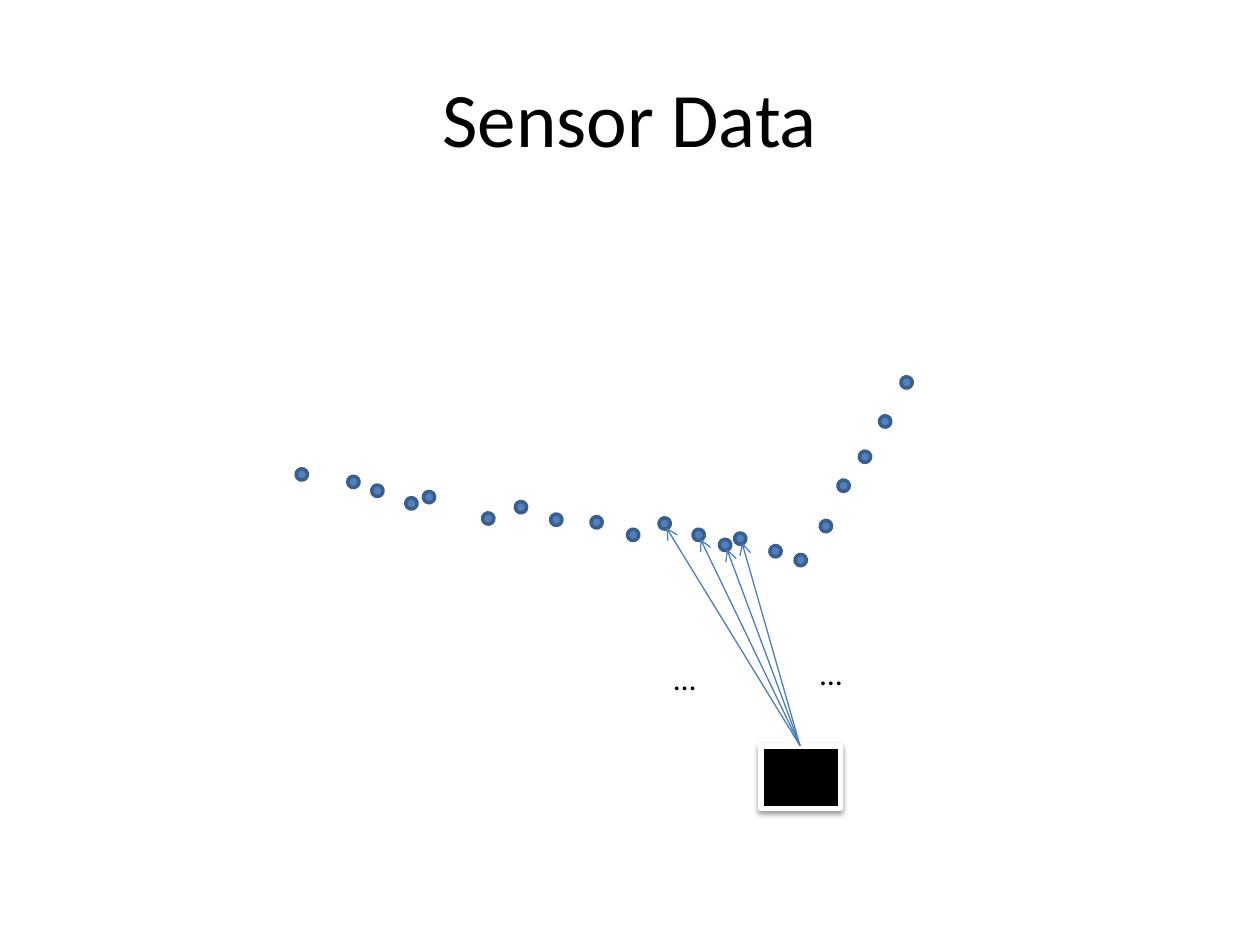
import pptx
import pptx.dml.color
import pptx.enum.shapes
import pptx.enum.text
import pptx.oxml
import pptx.oxml.ns
import pptx.util

PX = 9144
FONT = "Calibri"
COLORS = {
    "text": "000000",
    "dot": "4F81BD",
    "dot_edge": "3A5F8C",
    "ray": "4B7EBC",
    "sensor": "000000",
    "sensor_edge": "FFFFFF",
}
DOT_SIZE = 9
DOT_ANGLE = 19.9
RAY_TIP = (6, 8)
SCANNED_DOTS = [(288, 112), (315, 121), (336, 129), (348, 124)]
OTHER_DOTS = [
    (0, 73), (41, 79), (60, 86), (87, 96), (101, 91), (148, 108),
    (174, 99), (202, 109), (234, 111), (263, 121), (376, 134),
    (396, 141), (416, 114), (430, 82), (447, 59), (463, 31), (480, 0),
]


def px(*lengths):
    return [pptx.util.Emu(length * PX) for length in lengths]


def color(name):
    return pptx.dml.color.RGBColor.from_string(COLORS[name])


def style_text(para, size):
    para.font.name = FONT
    para.font.size = pptx.util.Pt(size)
    para.font.color.rgb = color("text")


def add_filled(page, kind, box, fill, edge, edge_width):
    shape = page.shapes.add_shape(kind, *px(*box))
    shape.shadow.inherit = False
    shape.fill.solid()
    shape.fill.fore_color.rgb = color(fill)
    shape.line.color.rgb = color(edge)
    shape.line.width = pptx.util.Pt(edge_width)
    return shape


def place_title(page, box):
    title = page.shapes.title
    title.left, title.top, title.width, title.height = px(*box)
    title.text_frame.text = "Sensor Data"
    title.text_frame.vertical_anchor = pptx.enum.text.MSO_ANCHOR.MIDDLE
    para = title.text_frame.paragraphs[0]
    para.alignment = pptx.enum.text.PP_ALIGN.CENTER
    style_text(para, 44)


def place_dots(page, box):
    for x, y in SCANNED_DOTS + OTHER_DOTS:
        dot = add_filled(
            page, pptx.enum.shapes.MSO_SHAPE.OVAL,
            (box[0] + x, box[1] + y, DOT_SIZE, DOT_SIZE),
            "dot", "dot_edge", 2,
        )
        dot.rotation = DOT_ANGLE


def place_sensor(page, box):
    sensor = add_filled(
        page, pptx.enum.shapes.MSO_SHAPE.RECTANGLE, box,
        "sensor", "sensor_edge", 3,
    )
    effects = sensor._element.spPr.find(pptx.oxml.ns.qn("a:effectLst"))
    effects.append(pptx.oxml.parse_xml(
        f'<a:outerShdw {pptx.oxml.ns.nsdecls("a")} blurRad="40000" dist="20000" '
        'dir="5400000" rotWithShape="0"><a:srgbClr val="000000">'
        '<a:alpha val="38000"/></a:srgbClr></a:outerShdw>'
    ))


def place_rays(page, dots_box, sensor_box):
    start = (sensor_box[0] + sensor_box[2] // 2, sensor_box[1])
    for x, y in SCANNED_DOTS:
        tip = (dots_box[0] + x + RAY_TIP[0], dots_box[1] + y + RAY_TIP[1])
        ray = page.shapes.add_connector(
            pptx.enum.shapes.MSO_CONNECTOR.STRAIGHT, *px(*start, *tip)
        )
        ray.line.color.rgb = color("ray")
        ray.line.width = pptx.util.Pt(0.75)
        ray.line._get_or_add_ln().append(pptx.oxml.parse_xml(
            f'<a:tailEnd {pptx.oxml.ns.nsdecls("a")} type="arrow"/>'
        ))
        ray._element.spPr.append(pptx.oxml.parse_xml(
            f'<a:effectLst {pptx.oxml.ns.nsdecls("a")}/>'
        ))


def place_ellipsis(page, box):
    frame = page.shapes.add_textbox(*px(*box)).text_frame
    frame.word_wrap = False
    frame.auto_size = pptx.enum.text.MSO_AUTO_SIZE.SHAPE_TO_FIT_TEXT
    frame.text = "…"
    style_text(frame.paragraphs[0], 18)


def main():
    deck = pptx.Presentation()
    deck.slide_width, deck.slide_height = px(1000, 750)
    page = deck.slides.add_slide(deck.slide_layouts.get_by_name("Title Only"))
    dots_box = (235, 299, 489, 150)
    sensor_box = (604, 592, 63, 50)
    place_title(page, (50, 30, 900, 125))
    place_dots(page, dots_box)
    place_sensor(page, sensor_box)
    place_rays(page, dots_box, sensor_box)
    for box in [(641, 514, 45, 40), (525, 518, 45, 40)]:
        place_ellipsis(page, box)
    deck.save("out.pptx")


if __name__ == "__main__":
    main()
